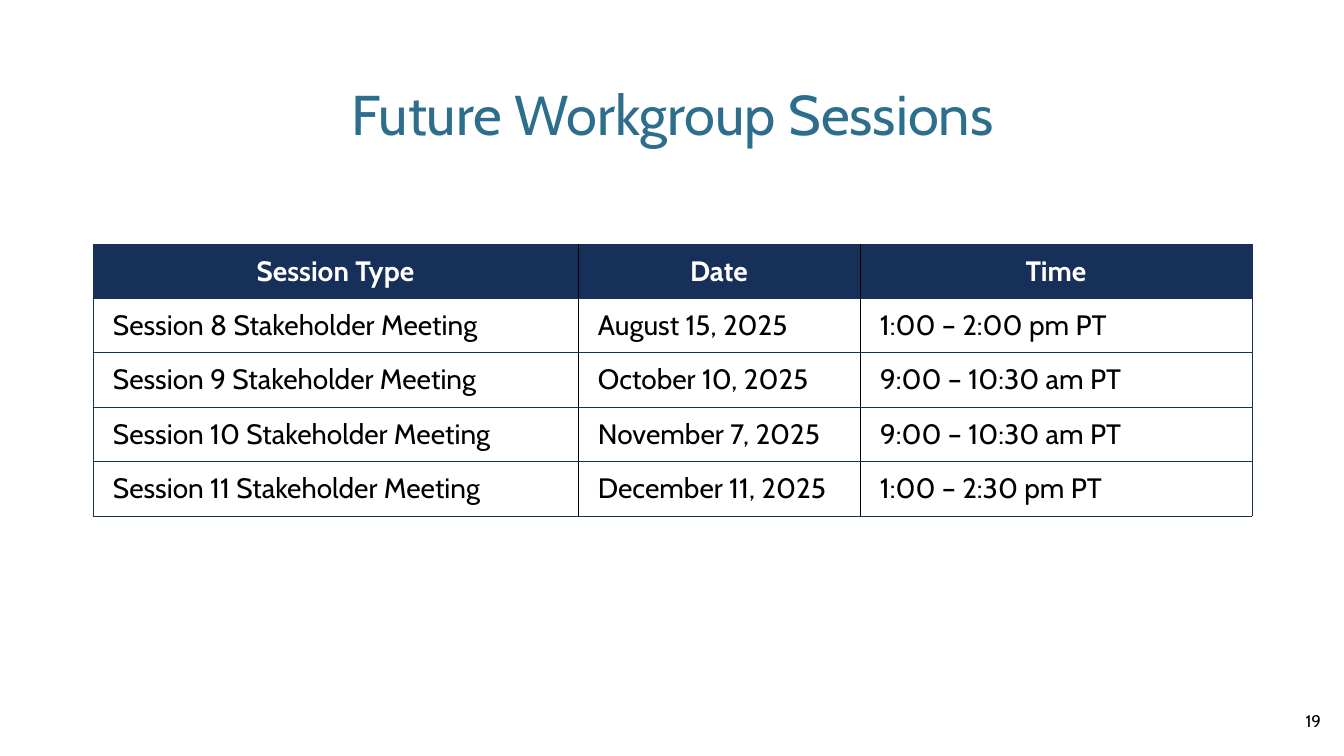
"""Build the slide listing the future workgroup sessions."""
from lxml.etree import SubElement
from pptx import Presentation
from pptx.dml.color import RGBColor
from pptx.enum.text import MSO_ANCHOR as Anchor, PP_ALIGN as Align
from pptx.oxml.ns import qn
from pptx.util import Pt

TITLE = "Future Workgroup Sessions"
PAGE_NUMBER = "19"
SESSIONS = [
    ("Session Type", "Date", "Time"),
    ("Session 8 Stakeholder Meeting", "August 15, 2025", "1:00 – 2:00 pm PT"),
    ("Session 9 Stakeholder Meeting", "October 10, 2025", "9:00 – 10:30 am PT"),
    ("Session 10 Stakeholder Meeting", "November 7, 2025", "9:00 – 10:30 am PT"),
    ("Session 11 Stakeholder Meeting", "December 11, 2025", "1:00 – 2:30 pm PT"),
]
COLORS = {"teal": "2D6E8D", "navy": "173059", "black": "000000", "white": "FFFFFF"}
FONT = "Cabin"
PX = 914400 / 100.8
SLIDE_SIZE = (1344, 756)
TITLE_BOX = (93, 40, 1159, 146)
NUMBER_BOX = (1028, 701, 303, 40)
TABLE_LEFT, TABLE_TOP, TABLE_HEIGHT = 93, 244, 272
COLUMN_WIDTHS = (485, 282, 392)
PAD_X, PAD_Y = 20, 10
BORDER = Pt(0.5)


def px(length):
    return round(length * PX)


def style(paragraph, size, color, align, bold=False):
    paragraph.alignment = align
    for run in paragraph.runs:
        run.font.name = FONT
        run.font.size = Pt(size)
        run.font.bold = bold
        run.font.color.rgb = RGBColor.from_string(COLORS[color])


def add_label(slide, box, text, size, color, align):
    frame = slide.shapes.add_textbox(*map(px, box)).text_frame
    frame.word_wrap = True
    frame.vertical_anchor = Anchor.MIDDLE
    frame.text = text
    style(frame.paragraphs[0], size, color, align)


def add_borders(cell, colors):
    properties = cell._tc.get_or_add_tcPr()
    for side, color in colors.items():
        line = SubElement(properties, qn(f"a:ln{side}"), w=str(BORDER))
        fill = SubElement(line, qn("a:solidFill"))
        SubElement(fill, qn("a:srgbClr"), val=COLORS[color])


def add_sessions(slide):
    last = len(COLUMN_WIDTHS) - 1
    table = slide.shapes.add_table(
        len(SESSIONS), len(COLUMN_WIDTHS), px(TABLE_LEFT), px(TABLE_TOP),
        px(sum(COLUMN_WIDTHS)), px(TABLE_HEIGHT)).table
    table.horz_banding = False
    for column, width in zip(table.columns, COLUMN_WIDTHS):
        column.width = px(width)
    for r, session in enumerate(SESSIONS):
        table.rows[r].height = px(TABLE_HEIGHT / len(SESSIONS))
        header = r == 0
        for c, text in enumerate(session):
            cell = table.cell(r, c)
            cell.text = text
            cell.margin_left = cell.margin_right = px(PAD_X)
            cell.margin_top = cell.margin_bottom = px(PAD_Y)
            style(cell.text_frame.paragraphs[0], 20, "white" if header else "black",
                  Align.CENTER if header else Align.LEFT, header)
            add_borders(cell, {"L": "navy" if c == 0 else "black",
                               "R": "navy" if c == last else "black",
                               "T": "navy", "B": "navy"})
            if header:
                cell.fill.solid()
                cell.fill.fore_color.rgb = RGBColor.from_string(COLORS["navy"])
            else:
                cell.fill.background()


def main():
    deck = Presentation()
    deck.slide_width, deck.slide_height = map(px, SLIDE_SIZE)
    slide = deck.slides.add_slide(deck.slide_layouts[6])
    add_label(slide, TITLE_BOX, TITLE, 40, "teal", Align.CENTER)
    add_sessions(slide)
    add_label(slide, NUMBER_BOX, PAGE_NUMBER, 12, "black", Align.RIGHT)
    deck.save("out.pptx")


if __name__ == "__main__":
    main()
